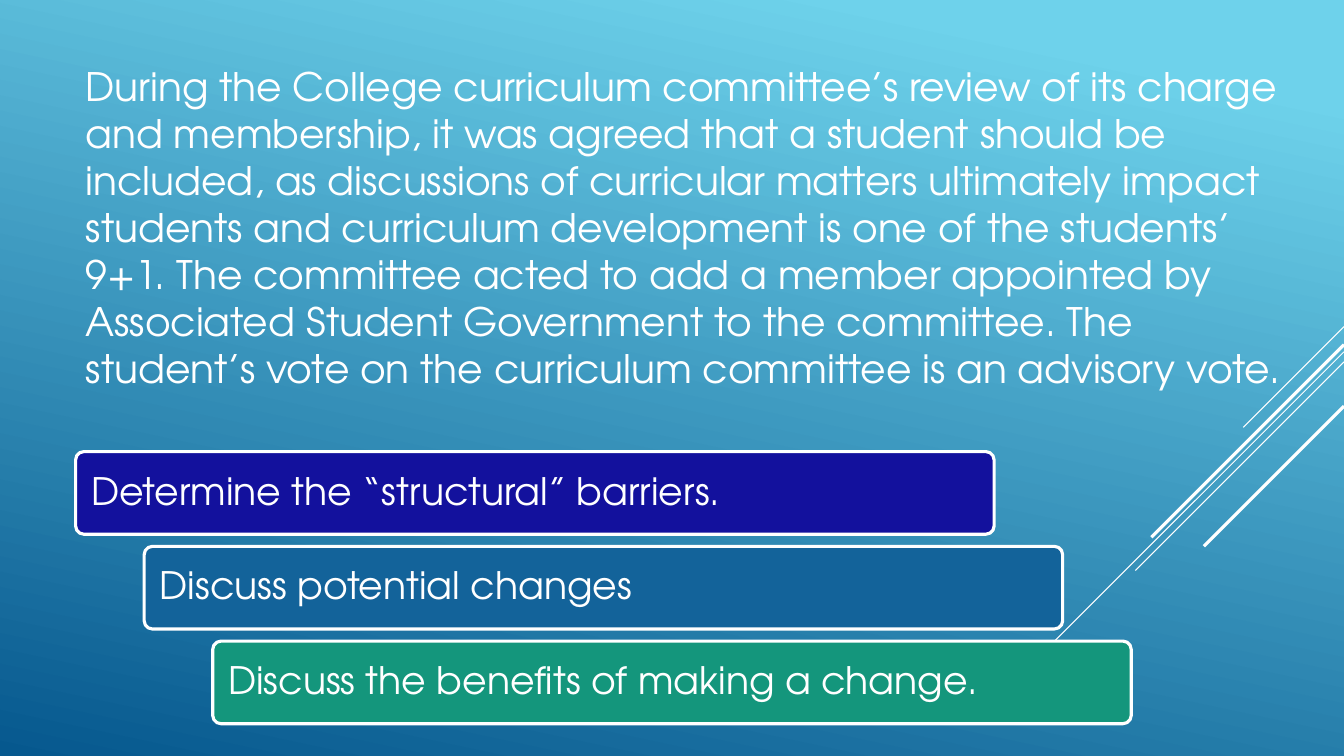
from dataclasses import dataclass

import pptx
import pptx.dml.color
import pptx.enum.shapes
import pptx.enum.text
import pptx.oxml.xmlchemy
import pptx.util

FONT = "TeX Gyre Adventor"
WHITE = "FFFFFF"
SLIDE_WIDTH = 13.33

STATEMENT = (
    "During the College curriculum committee’s review of its charge and membership, "
    "it was agreed that a student should be included, as discussions of curricular "
    "matters ultimately impact students and curriculum development is one of the "
    "students’ 9+1. The committee acted to add a member appointed by Associated "
    "Student Government to the committee. The student’s vote on the curriculum "
    "committee is an advisory vote."
)


@dataclass
class Ray:
    """A 45 degree line running down and left from the right edge."""
    top: float
    reach: float
    weight: float


@dataclass
class Step:
    text: str
    fill: str


RAYS = [
    Ray(3.24, 1.0, 0.75),
    Ray(3.49, 3.26, 0.75),
    Ray(3.59, 2.07, 0.75),
    Ray(3.42, 1.91, 2.25),
    Ray(4.03, 1.39, 2.25),
]

STEPS = [
    Step("Determine the “structural” barriers.", "13119D"),
    Step("Discuss potential changes", "13639A"),
    Step("Discuss the benefits of making a change.", "14967C"),
]
STEP_LEFT, STEP_TOP = 0.75, 4.48
STEP_RIGHT_SHIFT, STEP_DOWN_SHIFT = 0.68, 0.94


def colour(value: str) -> pptx.dml.color.RGBColor:
    return pptx.dml.color.RGBColor.from_string(value)


def add_span(para, text: str, size: float) -> None:
    span = para.add_run()
    span.text = text
    span.font.name = FONT
    span.font.size = pptx.util.Pt(size)
    span.font.color.rgb = colour(WHITE)


def paint_background(page) -> None:
    fill = page.background.fill
    fill.gradient()
    fill.gradient_angle = 258
    for stop, (position, value) in zip(
        fill.gradient_stops, [(0.1, "6ED2EB"), (1, "06588E")]
    ):
        stop.position = position
        stop.color.rgb = colour(value)


def draw_ray(page, ray: Ray) -> None:
    line = page.shapes.add_connector(
        pptx.enum.shapes.MSO_CONNECTOR.STRAIGHT,
        pptx.util.Inches(SLIDE_WIDTH),
        pptx.util.Inches(ray.top),
        pptx.util.Inches(SLIDE_WIDTH - ray.reach),
        pptx.util.Inches(ray.top + ray.reach),
    )
    line.line.color.rgb = colour(WHITE)
    line.line.width = pptx.util.Pt(ray.weight)
    line.element.spPr.append(pptx.oxml.xmlchemy.OxmlElement("a:effectLst"))


def write_statement(page) -> None:
    body = page.placeholders[1]
    body.left, body.top = pptx.util.Inches(0.75), pptx.util.Inches(0)
    body.width, body.height = pptx.util.Inches(12.27), pptx.util.Inches(4.5)
    frame = body.text_frame
    frame.word_wrap = True
    frame.auto_size = pptx.enum.text.MSO_AUTO_SIZE.NONE
    frame.vertical_anchor = pptx.enum.text.MSO_ANCHOR.MIDDLE
    para = frame.paragraphs[0]
    para.space_after = pptx.util.Pt(6)
    add_span(para, STATEMENT, 28)
    properties = para._p.get_or_add_pPr()
    properties.set("marL", "0")
    properties.set("indent", "0")
    properties.append(pptx.oxml.xmlchemy.OxmlElement("a:buNone"))


def draw_step(page, index: int, step: Step) -> None:
    box = page.shapes.add_shape(
        pptx.enum.shapes.MSO_SHAPE.ROUNDED_RECTANGLE,
        pptx.util.Inches(STEP_LEFT + index * STEP_RIGHT_SHIFT),
        pptx.util.Inches(STEP_TOP + index * STEP_DOWN_SHIFT),
        pptx.util.Inches(9.11),
        pptx.util.Inches(0.82),
    )
    box.adjustments[0] = 0.1
    box.shadow.inherit = False
    box.fill.solid()
    box.fill.fore_color.rgb = colour(step.fill)
    box.line.color.rgb = colour(WHITE)
    box.line.width = pptx.util.Pt(2.25)
    frame = box.text_frame
    frame.word_wrap = True
    frame.vertical_anchor = pptx.enum.text.MSO_ANCHOR.MIDDLE
    frame.margin_left = pptx.util.Inches(0.13)
    para = frame.paragraphs[0]
    para.alignment = pptx.enum.text.PP_ALIGN.LEFT
    para.line_spacing = 0.9
    add_span(para, step.text, 27)


def main() -> None:
    deck = pptx.Presentation()
    deck.slide_width = pptx.util.Inches(SLIDE_WIDTH)
    deck.slide_height = pptx.util.Inches(7.5)
    page = deck.slides.add_slide(deck.slide_layouts[1])
    title = page.shapes.title.element
    title.getparent().remove(title)
    paint_background(page)
    for ray in RAYS:
        draw_ray(page, ray)
    write_statement(page)
    for index, step in enumerate(STEPS):
        draw_step(page, index, step)
    deck.save("out.pptx")


if __name__ == "__main__":
    main()
